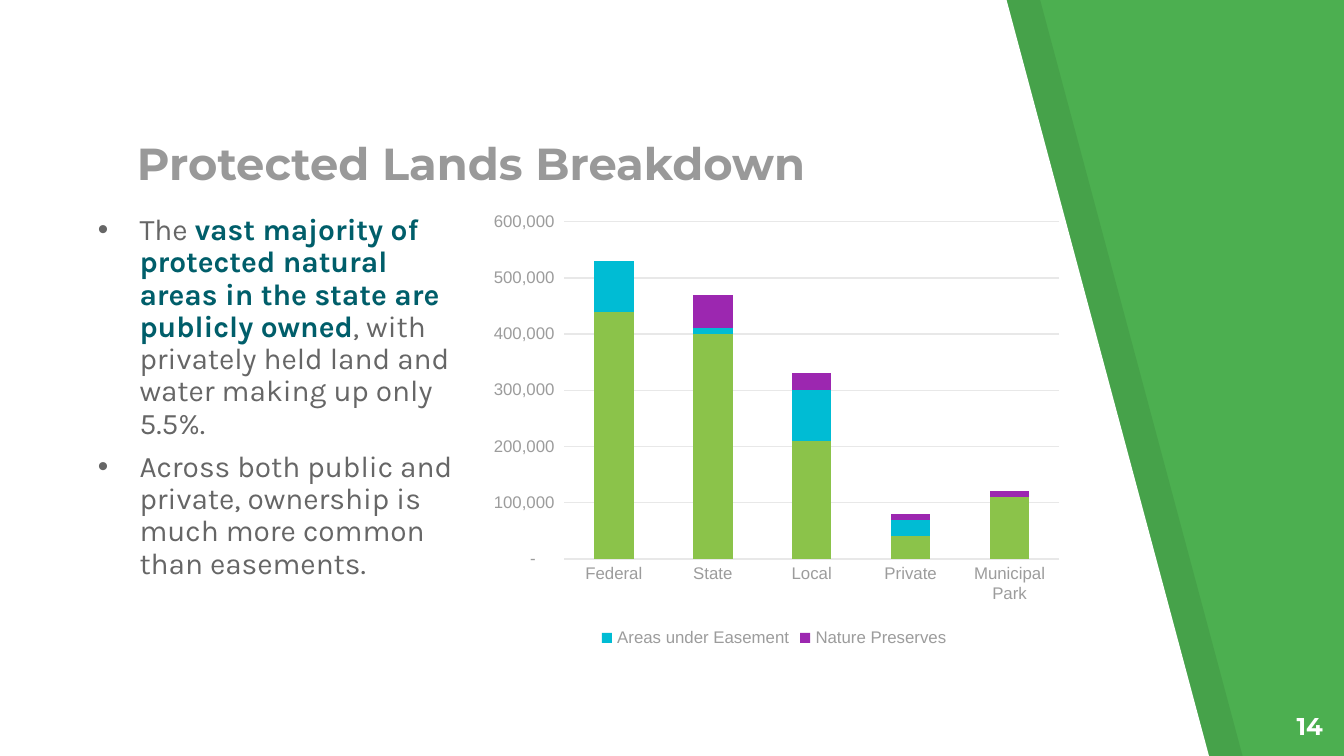
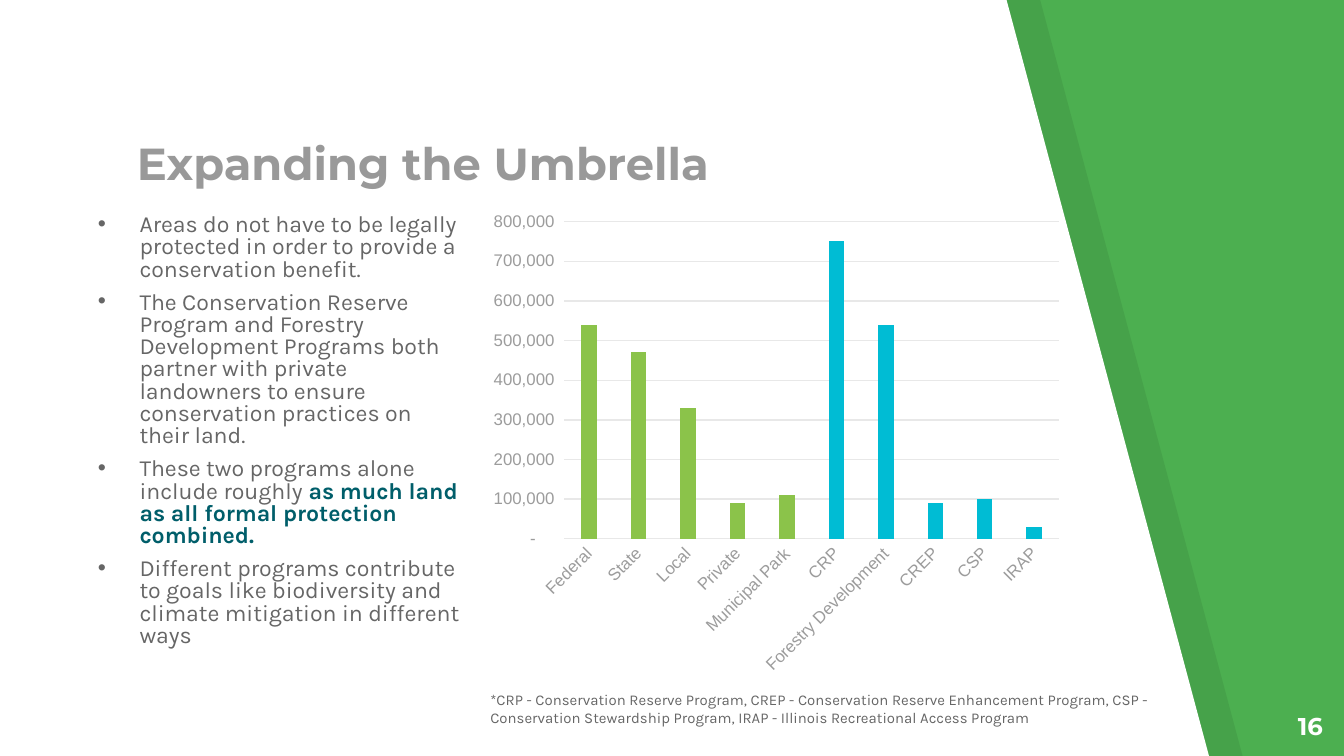
from dataclasses import dataclass
from lxml.etree import SubElement
from pptx import Presentation
from pptx.chart.data import CategoryChartData
from pptx.dml.color import RGBColor
from pptx.enum.chart import XL_CHART_TYPE, XL_LEGEND_POSITION, XL_TICK_MARK
from pptx.enum.text import MSO_ANCHOR, PP_ALIGN
from pptx.oxml import parse_xml
from pptx.oxml.ns import nsdecls, qn
from pptx.util import Inches, Pt


@dataclass(frozen=True)
class Theme:
    background: str = "4CAF50"
    panel: str = "FFFFFF"
    shade: str = "000000"
    shade_alpha: int = 7
    title: str = "999999"
    body: str = "666666"
    emphasis: str = "005E6A"
    axis_text: str = "9C9C9C"
    grid: str = "E8E8E8"
    green: str = "8BC34A"
    cyan: str = "00BCD4"
    purple: str = "9C27B0"
    title_font: str = "Montserrat"
    body_font: str = "Karla"
    chart_font: str = "Arial"
    title_size: float = 24
    number_size: float = 13
    note_size: float = 8
    chart_size: float = 10
    axis_size: float = 9


THEME = Theme()
NUMBER_FORMAT = r'_(* #,##0_);_(* \(#,##0\);_(* "-"??_);_(@_)'
OWNERS = ["Federal", "State", "Local", "Private", "Municipal Park"]
PROGRAMS = ["CRP", "Forestry Development", "CREP", "CSP", "IRAP"]

SLIDES = [
    {
        "title": "Protected Lands Breakdown",
        "number": "14",
        "bullet_size": 16,
        "line_spacing": 0.9,
        "bullet_height": 3.23,
        "bullets": [
            [("The ", False),
             ("vast majority of protected natural areas in the state are publicly owned", True),
             (", with privately held land and water making up only 5.5%.", False)],
            [("Across both public and private, ownership is much more common than easements.", False)],
        ],
        "chart": {
            "type": XL_CHART_TYPE.COLUMN_STACKED,
            "size": (4.42, 3.35),
            "plot_height": 2.51,
            "gap": 150,
            "overlap": 100,
            "maximum": 600000,
            "rotation": 0,
            "legend": True,
            "categories": OWNERS,
            "series": [
                ("Series 1", [440000, 400000, 210000, 40000, 110000], THEME.green),
                ("Areas under Easement", [90000, 10000, 90000, 30000, 0], THEME.cyan),
                ("Nature Preserves", [0, 60000, 30000, 10000, 10000], THEME.purple),
            ],
            "highlighted": [],
        },
    },
    {
        "title": "Expanding the Umbrella",
        "number": "16",
        "bullet_size": 12.4,
        "line_spacing": 0.8,
        "bullet_height": 3.5,
        "bullets": [
            [("Areas do not have to be legally protected in order to provide a conservation benefit.", False)],
            [("The Conservation Reserve Program and Forestry Development Programs both partner with "
              "private landowners to ensure conservation practices on their land.", False)],
            [("These two programs alone include roughly", False),
             (" as much land as all formal protection combined.", True)],
            [("Different programs contribute to goals like biodiversity and climate mitigation "
              "in different ways", False)],
        ],
        "chart": {
            "type": XL_CHART_TYPE.COLUMN_CLUSTERED,
            "size": (4.41, 3.59),
            "plot_height": 2.36,
            "gap": 219,
            "overlap": -27,
            "maximum": 800000,
            "rotation": -45,
            "legend": False,
            "categories": OWNERS + PROGRAMS,
            "series": [
                ("Series 1", [540000, 470000, 330000, 90000, 110000,
                              750000, 540000, 90000, 100000, 30000], THEME.green),
            ],
            "highlighted": PROGRAMS,
        },
        "note": "*CRP - Conservation Reserve Program, CREP - Conservation Reserve Enhancement Program, "
                "CSP - Conservation Stewardship Program, IRAP - Illinois Recreational Access Program",
    },
]


def color(value):
    return RGBColor.from_string(value)


def paint(fill, value):
    fill.solid()
    fill.fore_color.rgb = color(value)


def style_font(font, name, size, value, bold=False):
    font.name = name
    font.size = Pt(size)
    font.color.rgb = color(value)
    font.bold = bold


def add_panel(slide, left, value, alpha=None):
    outline = [(left, -0.01), (left, 5.64), (left + 9, 5.64), (left + 7.49, 0)]
    corners = [(Inches(x), Inches(y)) for x, y in outline]
    builder = slide.shapes.build_freeform(*corners[0])
    builder.add_line_segments(corners[1:], close=True)
    shape = builder.convert_to_shape()
    shape.shadow.inherit = False
    shape.line.fill.background()
    paint(shape.fill, value)
    if alpha is not None:
        fill_color = shape.fill._xPr.find(qn("a:solidFill"))[0]
        SubElement(fill_color, qn("a:alpha"), val=str(alpha * 1000))


def add_text_frame(slide, left, top, width, height, vertical_margin=0.1):
    box = slide.shapes.add_textbox(Inches(left), Inches(top), Inches(width), Inches(height))
    frame = box.text_frame
    frame.word_wrap = True
    frame.margin_left = frame.margin_right = Inches(0.1)
    frame.margin_top = frame.margin_bottom = Inches(vertical_margin)
    return frame


def add_label(slide, text, place, font, align=PP_ALIGN.LEFT, anchor=MSO_ANCHOR.TOP, vertical_margin=0.1):
    frame = add_text_frame(slide, *place, vertical_margin)
    frame.vertical_anchor = anchor
    paragraph = frame.paragraphs[0]
    paragraph.text = text
    paragraph.alignment = align
    style_font(paragraph.font, *font)


def add_bullets(slide, content):
    frame = add_text_frame(slide, 0.63, 1.5, 2.92, content["bullet_height"])
    for index, pieces in enumerate(content["bullets"]):
        paragraph = frame.paragraphs[0] if index == 0 else frame.add_paragraph()
        properties = paragraph._p.get_or_add_pPr()
        properties.set("marL", str(Inches(0.31)))
        properties.set("indent", str(-Inches(0.31)))
        bullet_color = SubElement(properties, qn("a:buClr"))
        SubElement(bullet_color, qn("a:srgbClr"), val=THEME.body)
        SubElement(properties, qn("a:buFont"), typeface=THEME.chart_font)
        SubElement(properties, qn("a:buChar"), char="•")
        paragraph.line_spacing = content["line_spacing"]
        paragraph.space_before = Pt(6 if index else 0)
        style_font(paragraph.font, THEME.body_font, content["bullet_size"], THEME.body)
        for text, emphasised in pieces:
            run = paragraph.add_run()
            run.text = text
            if emphasised:
                run.font.bold = True
                run.font.color.rgb = color(THEME.emphasis)


def place_plot(chart, details):
    width, height = details["size"]
    fractions = {"x": 0.65 / width, "y": 0.14 / height,
                 "w": 3.68 / width, "h": details["plot_height"] / height}
    sizes = "".join(f'<c:{tag} val="{value:.4f}"/>' for tag, value in fractions.items())
    plot_area = chart._chartSpace.chart.plotArea
    for layout in plot_area.findall(qn("c:layout")):
        plot_area.remove(layout)
    plot_area.insert(0, parse_xml(
        f'<c:layout {nsdecls("c")}><c:manualLayout><c:layoutTarget val="inner"/>'
        f'<c:xMode val="edge"/><c:yMode val="edge"/>{sizes}</c:manualLayout></c:layout>'))


def style_axes(chart, details):
    for axis in (chart.category_axis, chart.value_axis):
        axis.major_tick_mark = axis.minor_tick_mark = XL_TICK_MARK.NONE
        style_font(axis.tick_labels.font, THEME.chart_font, THEME.axis_size, THEME.axis_text)
    value_axis = chart.value_axis
    value_axis.minimum_scale = 0
    value_axis.maximum_scale = details["maximum"]
    value_axis.major_unit = 100000
    value_axis.tick_labels.number_format = NUMBER_FORMAT
    value_axis.tick_labels.number_format_is_linked = False
    value_axis.format.line.fill.background()
    for line in (value_axis.major_gridlines.format.line, chart.category_axis.format.line):
        line.color.rgb = color(THEME.grid)
        line.width = Pt(0.75)
    body = chart.category_axis._element.find(qn("c:txPr")).find(qn("a:bodyPr"))
    body.set("rot", str(details["rotation"] * 60000))


def add_legend(chart):
    chart.has_legend = True
    legend = chart.legend
    legend.position = XL_LEGEND_POSITION.BOTTOM
    legend.include_in_layout = False
    style_font(legend.font, THEME.chart_font, THEME.axis_size, THEME.axis_text)
    legend._element.insert(1, parse_xml(
        f'<c:legendEntry {nsdecls("c")}><c:idx val="0"/><c:delete val="1"/></c:legendEntry>'))


def add_column_chart(slide, details):
    data = CategoryChartData()
    data.categories = details["categories"]
    for name, values, _ in details["series"]:
        data.add_series(name, values)
    width, height = details["size"]
    chart = slide.shapes.add_chart(details["type"], Inches(3.55), Inches(1.51),
                                   Inches(width), Inches(height), data).chart
    chart.has_title = False
    chart.has_legend = False
    style_font(chart.font, THEME.chart_font, THEME.chart_size, THEME.body)
    plot = chart.plots[0]
    plot.gap_width = details["gap"]
    plot.overlap = details["overlap"]
    plot.vary_by_categories = False
    for series, (_, _, fill) in zip(plot.series, details["series"]):
        series.invert_if_negative = False
        paint(series.format.fill, fill)
        for category in details["highlighted"]:
            point = series.points[details["categories"].index(category)]
            paint(point.format.fill, THEME.cyan)
    style_axes(chart, details)
    place_plot(chart, details)
    if details["legend"]:
        add_legend(chart)


def add_content_slide(presentation, content):
    slide = presentation.slides.add_slide(presentation.slide_layouts[6])
    paint(slide.background.fill, THEME.background)
    add_panel(slide, 0.25, THEME.shade, THEME.shade_alpha)
    add_panel(slide, 0, THEME.panel)
    add_column_chart(slide, content["chart"])
    add_label(slide, content["number"], (9.34, 5.19, 0.6, 0.43),
              (THEME.title_font, THEME.number_size, THEME.panel, True), align=PP_ALIGN.RIGHT)
    add_bullets(slide, content)
    add_label(slide, content["title"], (0.92, 1.06, 5.25, 0.45),
              (THEME.title_font, THEME.title_size, THEME.title, True), anchor=MSO_ANCHOR.BOTTOM)
    if "note" in content:
        add_label(slide, content["note"], (3.55, 5.09, 5.26, 0.37),
                  (THEME.body_font, THEME.note_size, THEME.body), vertical_margin=0.05)


def main():
    presentation = Presentation()
    presentation.slide_width = Inches(10)
    presentation.slide_height = Inches(10) * 9 // 16
    for content in SLIDES:
        add_content_slide(presentation, content)
    presentation.save("out.pptx")


if __name__ == "__main__":
    main()
